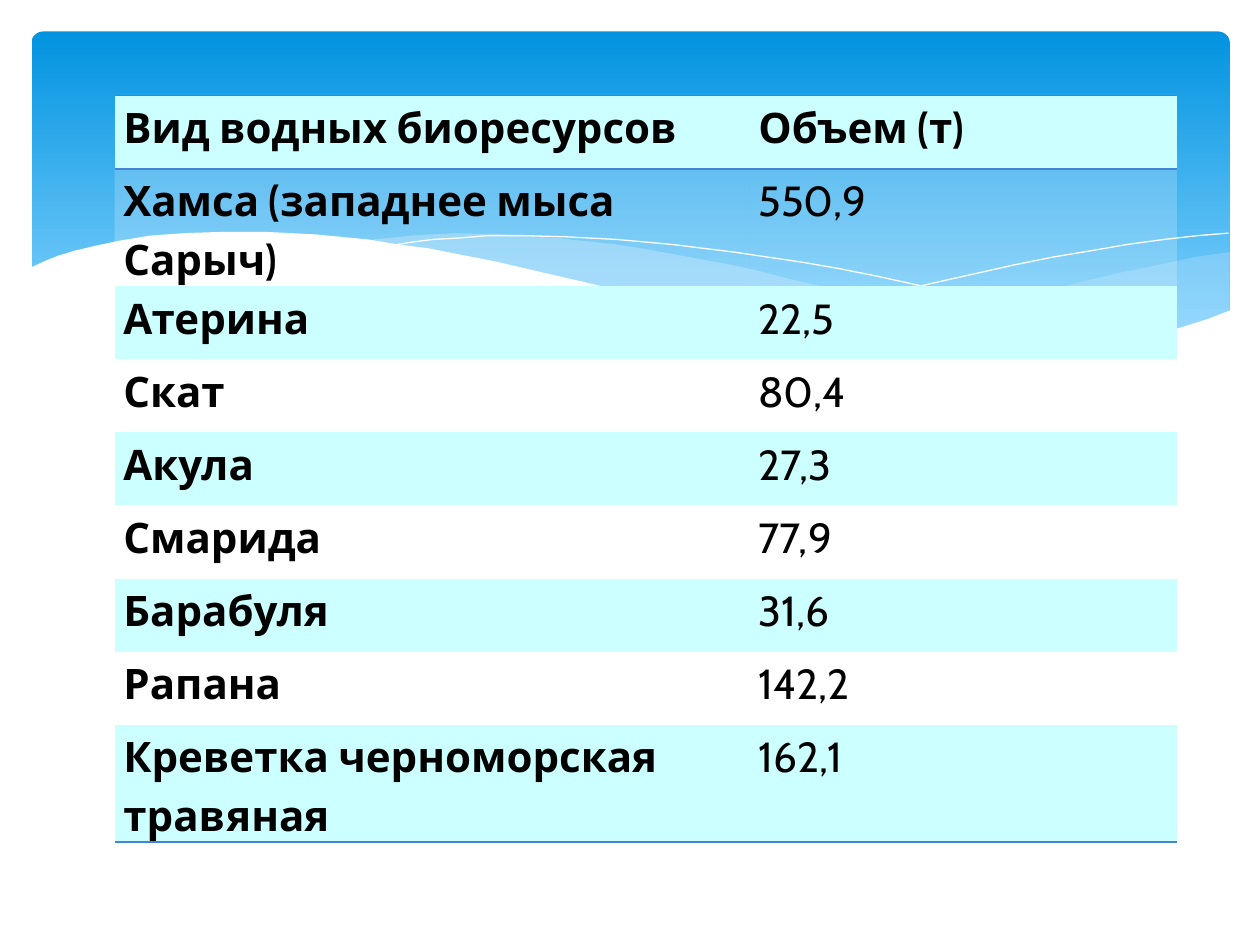
from dataclasses import dataclass
from typing import Optional

from lxml.etree import SubElement
from pptx import Presentation
from pptx.dml.color import RGBColor
from pptx.enum.shapes import MSO_SHAPE as Shape
from pptx.oxml.ns import qn
from pptx.util import Inches, Pt

WHITE = RGBColor(0xFF, 0xFF, 0xFF)
BLACK = RGBColor(0, 0, 0)
MINT = RGBColor(0xCC, 0xFF, 0xFF)
RULE = RGBColor(0x45, 0x84, 0xD3)
PALE = RGBColor(0xC6, 0xE7, 0xFC)
DEEP = RGBColor(0x02, 0x93, 0xE0)
SKY = RGBColor(0x83, 0xD3, 0xFE)
NO_STYLE = "{2D5ABB26-0587-4C30-8999-92F81FD0307C}"


@dataclass
class Wave:
    """A filled wave, or a thin white curve when there is no fill."""
    points: list[tuple[float, float]]
    fill: Optional[RGBColor] = None
    alpha: int = 100


@dataclass
class Catch:
    name: str
    tons: str


WAVES = [
    Wave([(9.76, 2), (9.48, 2.04), (9.21, 2.1), (8.91, 2.16), (8.61, 2.23),
          (8.05, 2.37), (7.53, 2.48), (7.06, 2.57), (6.61, 2.65),
          (6.91, 2.69), (7.19, 2.72), (7.45, 2.75), (7.69, 2.77),
          (8.03, 2.78), (8.35, 2.77), (8.63, 2.75), (8.89, 2.72),
          (9.13, 2.67), (9.35, 2.62), (9.49, 2.57), (9.76, 2.47)], PALE, 29),
    Wave([(8.93, 2.73), (8.66, 2.69), (8.07, 2.6), (7.41, 2.47),
          (6.68, 2.31), (6.29, 2.22), (5.98, 2.14), (5.69, 2.08),
          (5.41, 2.03), (5.14, 1.98), (4.89, 1.94), (4.42, 1.89),
          (3.99, 1.86), (3.61, 1.85), (3.28, 1.87), (2.86, 1.91),
          (3.23, 1.96), (3.62, 2.03), (4.04, 2.11), (4.49, 2.22),
          (4.91, 2.32), (5.3, 2.4), (5.66, 2.48), (6.01, 2.55),
          (6.34, 2.61), (6.65, 2.66), (6.95, 2.7), (7.22, 2.74),
          (7.48, 2.76), (7.85, 2.78), (8.28, 2.78), (8.57, 2.77)], PALE, 40),
    Wave([(3.09, 1.95), (3.28, 1.92), (3.44, 1.9), (3.63, 1.89),
          (3.87, 1.87), (4.16, 1.87), (4.5, 1.88), (4.89, 1.9),
          (5.33, 1.94), (5.82, 2), (6.36, 2.08), (6.65, 2.13),
          (6.95, 2.19), (7.27, 2.26), (7.6, 2.33), (7.95, 2.41),
          (8.31, 2.51), (8.69, 2.61), (9.07, 2.72)]),
    Wave([(6.13, 2.57), (6.53, 2.46), (6.95, 2.35), (7.48, 2.23),
          (8.06, 2.1), (8.36, 2.04), (8.66, 1.99), (8.95, 1.94),
          (9.24, 1.9), (9.51, 1.87), (9.75, 1.85)]),
    Wave([(9.77, 2.46), (9.59, 2.53), (9.4, 2.59), (9.2, 2.65),
          (8.99, 2.69), (8.75, 2.73), (8.5, 2.75), (8.23, 2.77),
          (7.93, 2.76), (7.61, 2.75), (7.26, 2.72), (6.88, 2.68),
          (6.48, 2.62), (6.03, 2.54), (5.55, 2.45), (5.03, 2.33),
          (4.47, 2.2), (3.91, 2.07), (3.65, 2.02), (3.4, 1.97),
          (3.16, 1.94), (2.92, 1.9), (2.5, 1.86), (2.11, 1.84),
          (1.77, 1.84), (1.46, 1.85), (1.19, 1.87), (0.95, 1.91),
          (0.76, 1.95), (0.59, 1.99), (0.46, 2.03), (0.36, 2.07),
          (0.23, 2.13), (0.23, 3.29), (9.77, 3.29)], WHITE),
]

HEAD = Catch("Вид водных биоресурсов", "Объем (т)")
CATCHES = [
    Catch("Хамса (западнее мыса Сарыч)", "550,9"),
    Catch("Атерина", "22,5"),
    Catch("Скат", "80,4"),
    Catch("Акула", "27,3"),
    Catch("Смарида", "77,9"),
    Catch("Барабуля", "31,6"),
    Catch("Рапана", "142,2"),
    Catch("Креветка черноморская травяная", "162,1"),
]


def paint(fill, color: RGBColor, alpha: int, node) -> None:
    """Fill with a solid colour; alpha is the opacity in percent."""
    fill.solid()
    fill.fore_color.rgb = color
    if alpha < 100:
        tint = node.find(f"{qn('a:solidFill')}/{qn('a:srgbClr')}")
        SubElement(tint, qn("a:alpha"), val=str(alpha * 1000))


def add_banner(shapes) -> None:
    box = shapes.add_shape(Shape.ROUNDED_RECTANGLE, Inches(0.25),
                           Inches(0.25), Inches(9.51), Inches(2.7))
    box.adjustments[0] = 0.034
    box.shadow.inherit = False
    box.line.fill.background()
    box.fill.gradient()
    box.fill.gradient_angle = 270
    for stop, color, place in zip(box.fill.gradient_stops,
                                  (DEEP, SKY), (0, 0.9)):
        stop.color.rgb = color
        stop.position = place


def add_wave(shapes, wave: Wave) -> None:
    start, *rest = [(Inches(x), Inches(y)) for x, y in wave.points]
    pen = shapes.build_freeform(*start)
    pen.add_line_segments(rest, close=wave.fill is not None)
    shape = pen.convert_to_shape()
    shape.shadow.inherit = False
    if wave.fill is None:
        shape.fill.background()
        shape.line.color.rgb = WHITE
        shape.line.width = Pt(0)
    else:
        paint(shape.fill, wave.fill, wave.alpha, shape._element.spPr)
        shape.line.fill.background()


def add_rule(cell, tag: str) -> None:
    """Draw one border of a cell; call before the cell is filled."""
    edge = SubElement(cell._tc.get_or_add_tcPr(), qn(tag), w=str(Pt(1)))
    solid = SubElement(edge, qn("a:solidFill"))
    SubElement(solid, qn("a:srgbClr"), val=str(RULE))


def set_cell(cell, text: str, bold: bool, band: bool,
             rules: list[str]) -> None:
    cell.margin_left = cell.margin_right = Inches(0.07)
    cell.margin_top = cell.margin_bottom = 0
    for tag in rules:
        add_rule(cell, tag)
    color, alpha = (MINT, 100) if band else (WHITE, 20)
    paint(cell.fill, color, alpha, cell._tc.tcPr)
    cell.text = text
    para = cell.text_frame.paragraphs[0]
    para.line_spacing = 1.15
    para.space_after = Pt(10)
    font = para.font
    font.name, font.size, font.bold = "Cabin", Pt(24), bold
    font.color.rgb = BLACK


def add_catches(shapes, rows: list[Catch]) -> None:
    high = Inches(0.58)
    table = shapes.add_table(len(rows), 2, Inches(0.91), Inches(0.76),
                             Inches(8.43), high * len(rows)).table
    table._tbl.tblPr.find(qn("a:tableStyleId")).text = NO_STYLE
    table.first_row = table.horz_banding = False
    for col, width in zip(table.columns, (5.04, 3.39)):
        col.width = Inches(width)
    for i, item in enumerate(rows):
        table.rows[i].height = high
        rules = ["a:lnT"] if i == 0 else []
        if i in (0, len(rows) - 1):
            rules.append("a:lnB")
        for j, text in enumerate((item.name, item.tons)):
            set_cell(table.cell(i, j), text, i == 0 or j == 0,
                     i % 2 == 0, rules)


def main() -> None:
    deck = Presentation()
    deck.slide_width, deck.slide_height = Inches(10), Inches(7.5)
    shapes = deck.slides.add_slide(deck.slide_layouts[6]).shapes
    add_banner(shapes)
    for wave in WAVES:
        add_wave(shapes, wave)
    add_catches(shapes, [HEAD, *CATCHES])
    deck.save("out.pptx")


if __name__ == "__main__":
    main()
